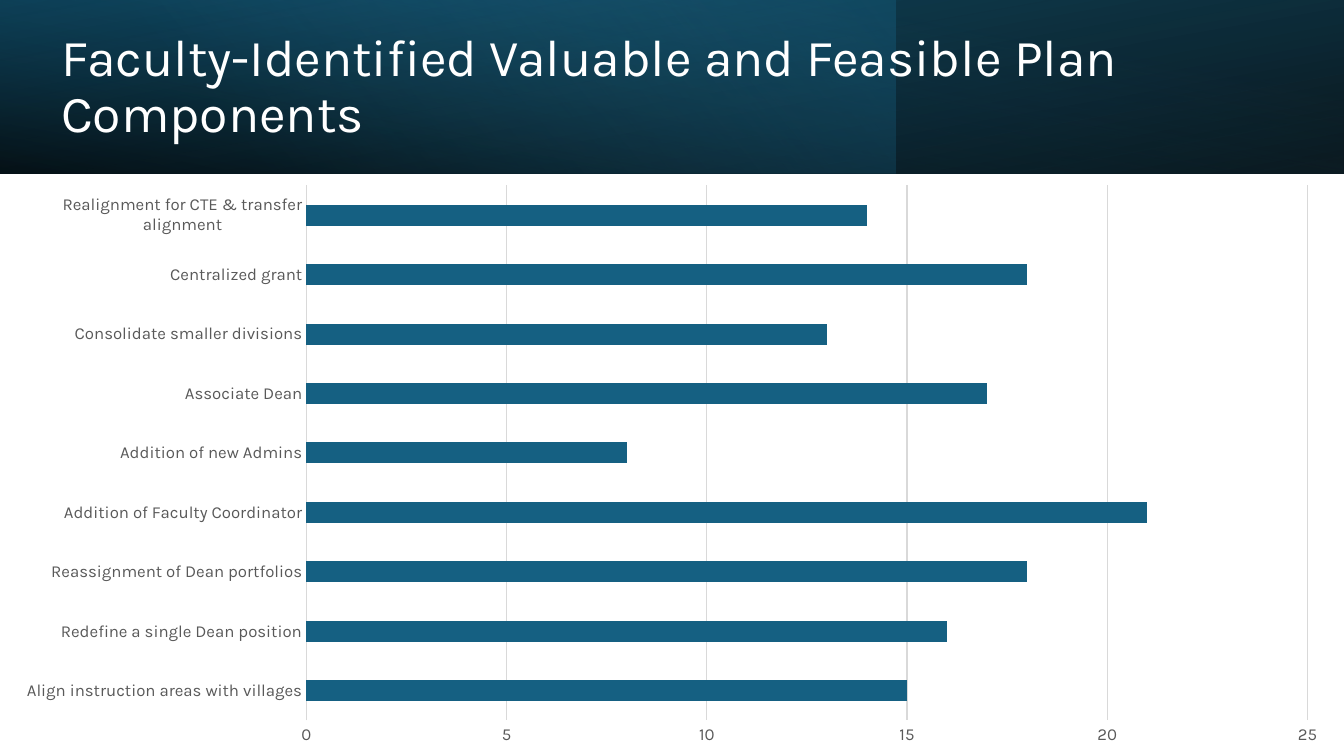
"""Build a slide with a shaded title band over a bar chart."""
import dataclasses

import pptx
import pptx.chart.data
import pptx.dml.color
import pptx.enum.chart
import pptx.enum.text
import pptx.oxml
import pptx.oxml.ns
import pptx.util


@dataclasses.dataclass(frozen=True)
class Theme:
    """Hold the colours, font and type sizes."""
    font: str = "Karla"
    white: str = "FFFFFF"
    black: str = "000000"
    teal: str = "156082"
    deep: str = "104862"
    sky: str = "46B1E1"
    grey: str = "595959"
    rule: str = "D9D9D9"
    head: float = 37
    label: float = 12
    hair: float = 0.75


THEME = Theme()
WIDE, HIGH = pptx.util.Inches(13.33), pptx.util.Inches(7.5)
BAND = 0.23

SCORES = {
    "Align instruction areas with villages": 15,
    "Redefine a single Dean position": 16,
    "Reassignment of Dean portfolios": 18,
    "Addition of Faculty Coordinator": 21,
    "Addition of new Admins": 8,
    "Associate Dean": 17,
    "Consolidate smaller divisions": 13,
    "Centralized grant": 18,
    "Realignment for CTE & transfer alignment": 14,
}

SHADES = [
    (1, 100, {"rot": "10800000", "flipH": "1"},
     [(0, THEME.black, 96), (100, THEME.deep, 100)]),
    (2 / 3, 140, {},
     [(0, THEME.teal, 41), (74, THEME.sky, 0)]),
    (1, 260, {"flipH": "1"},
     [(0, THEME.black, 63), (78, THEME.teal, 15)]),
]


def place(left, top, width, height):
    """Turn shares of the slide into lengths."""
    return [int(part * side) for part, side in
            zip((left, top, width, height), (WIDE, HIGH) * 2)]


def style(item, values):
    """Set each named value on an item."""
    for name, value in values.items():
        setattr(item, name, value)


def tint(code):
    """Turn a hex code into a colour."""
    return pptx.dml.color.RGBColor.from_string(code)


def set_font(font, size, code):
    """Give a font its face, size and colour."""
    style(font, {"name": THEME.font, "size": pptx.util.Pt(size)})
    font.color.rgb = tint(code)


def set_line(line, code):
    """Give a line its colour and width."""
    line.color.rgb = tint(code)
    line.width = pptx.util.Pt(THEME.hair)


def add_shade(slide, share, angle, turn, stops):
    """Add one see-through gradient layer of the title band."""
    shape = slide.shapes.add_shape(1, *place(0, 0, share, BAND))
    shape.shadow.inherit = False
    shape.line.fill.background()
    props = shape._element.spPr
    for name, value in turn.items():
        props.xfrm.set(name, value)
    marks = "".join(
        f'<a:gs pos="{spot * 1000}"><a:srgbClr val="{code}">'
        f'<a:alpha val="{alpha * 1000}"/></a:srgbClr></a:gs>'
        for spot, code, alpha in stops)
    fill = pptx.oxml.parse_xml(
        f'<a:gradFill {pptx.oxml.ns.nsdecls("a")} rotWithShape="1">'
        f'<a:gsLst>{marks}</a:gsLst>'
        f'<a:lin ang="{angle * 60000}" scaled="0"/></a:gradFill>')
    props.find(pptx.oxml.ns.qn("a:prstGeom")).addnext(fill)


def set_title(slide, text):
    """Place and format the title above the band."""
    title = slide.shapes.title
    slide.shapes._spTree.append(title._element)
    style(title, dict(zip(("left", "top", "width", "height"),
                          place(0.038, 0.031, 0.943, 0.169))))
    frame = title.text_frame
    frame.text = text
    style(frame, {
        "word_wrap": True,
        "auto_size": pptx.enum.text.MSO_AUTO_SIZE.NONE,
        "vertical_anchor": pptx.enum.text.MSO_ANCHOR.MIDDLE,
    })
    para = frame.paragraphs[0]
    style(para, {"alignment": pptx.enum.text.PP_ALIGN.LEFT,
                 "line_spacing": 0.9})
    set_font(para.runs[0].font, THEME.head, THEME.white)


def add_bars(slide, scores):
    """Add the bar chart that fills the rest of the slide."""
    data = pptx.chart.data.CategoryChartData()
    data.categories = list(scores)
    data.add_series("Series 1", list(scores.values()))
    chart = slide.shapes.add_chart(
        pptx.enum.chart.XL_CHART_TYPE.BAR_CLUSTERED,
        *place(0, BAND, 1, 1 - BAND), data).chart
    style(chart, {"has_legend": False, "has_title": False})
    set_font(chart.font, THEME.label, THEME.grey)
    plot = chart.plots[0]
    style(plot, {"gap_width": 182, "vary_by_categories": False})
    fill = plot.series[0].format.fill
    fill.solid()
    fill.fore_color.rgb = tint(THEME.teal)
    none = pptx.enum.chart.XL_TICK_MARK.NONE
    for axis in (chart.category_axis, chart.value_axis):
        style(axis, {"major_tick_mark": none, "minor_tick_mark": none})
        set_font(axis.tick_labels.font, THEME.label, THEME.grey)
    set_line(chart.category_axis.format.line, THEME.rule)
    value = chart.value_axis
    style(value, {"minimum_scale": 0, "maximum_scale": 25, "major_unit": 5,
                  "has_major_gridlines": True})
    value.format.line.fill.background()
    set_line(value.major_gridlines.format.line, THEME.rule)


def main():
    """Build and save the slide."""
    deck = pptx.Presentation()
    style(deck, {"slide_width": WIDE, "slide_height": HIGH})
    slide = deck.slides.add_slide(deck.slide_layouts[5])
    for shade in SHADES:
        add_shade(slide, *shade)
    set_title(slide, "Faculty-Identified Valuable and Feasible Plan Components")
    add_bars(slide, SCORES)
    deck.save("out.pptx")


if __name__ == "__main__":
    main()
